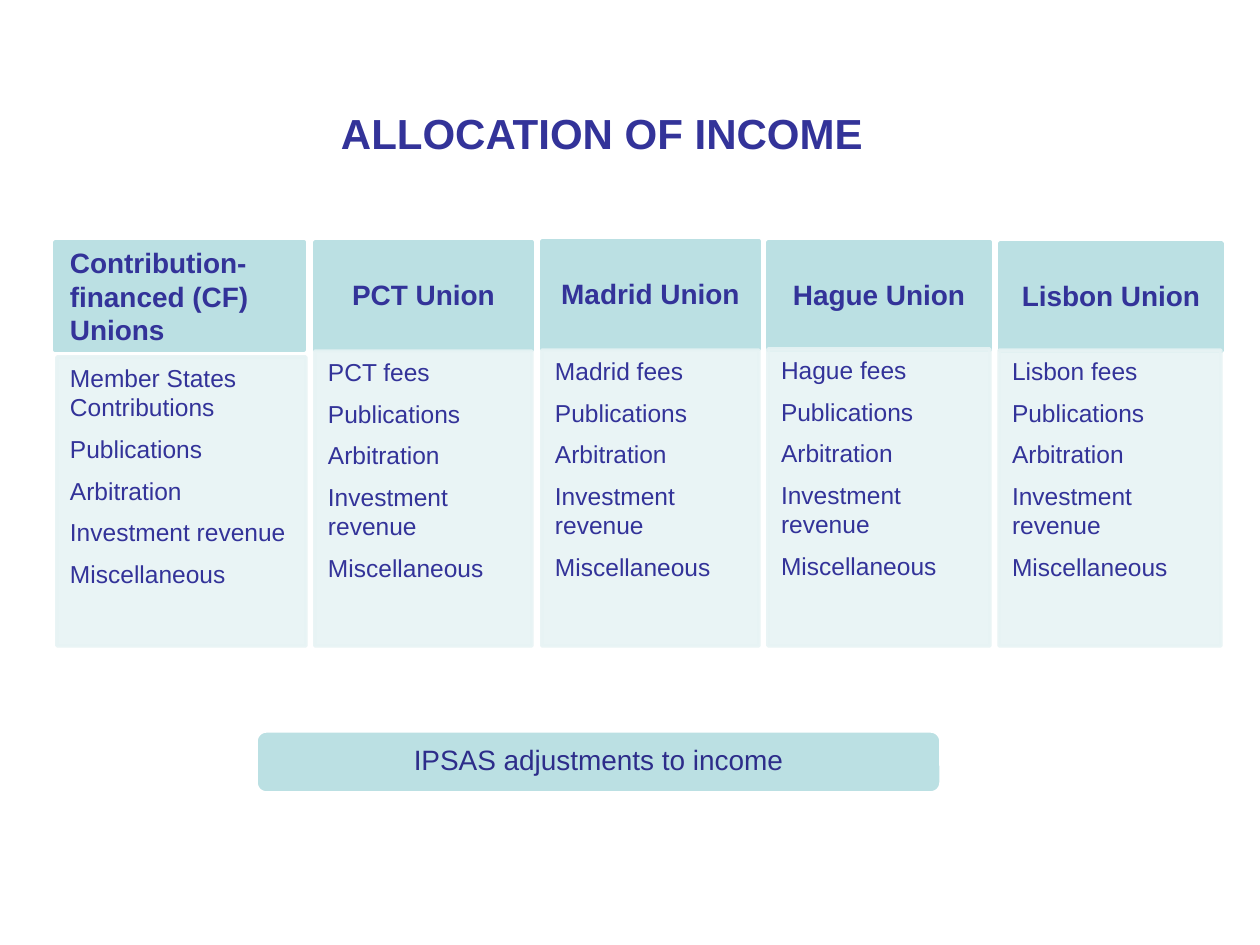
import dataclasses

import lxml.etree
import pptx
import pptx.dml.color
import pptx.enum.shapes
import pptx.enum.text
import pptx.oxml.ns
import pptx.util

EMU_PER_PX = 914400 / 126
SHAPES = pptx.enum.shapes.MSO_SHAPE
ALIGN = pptx.enum.text.PP_ALIGN
ANCHOR = pptx.enum.text.MSO_ANCHOR


@dataclasses.dataclass(frozen=True)
class Theme:
    """Colours, font and type sizes of the slide."""
    font: str = "Arial"
    ink: str = "333399"
    adjustment_ink: str = "2D2D8A"
    strong: str = "BBE0E3"
    pale: str = "E7F3F4"
    paper: str = "FFFFFF"
    title_size: int = 24
    heading_size: int = 16
    item_size: int = 14
    item_gap: int = 7
    border: int = 2
    pale_opacity: int = 90


@dataclasses.dataclass(frozen=True)
class Union:
    """One column: its heading, its first source of income and its place."""
    heading: tuple
    first_source: str
    left: int
    width: int
    top: int
    body_left: int
    body_top: int
    align: object = ALIGN.CENTER
    line_spacing: float = 0.9


THEME = Theme()
BODY_BOTTOM = 646
HEADING_HEIGHT = 108
SHARED_SOURCES = ("Publications", "Arbitration", "Investment revenue", "Miscellaneous")
UNIONS = (
    Union(("Contribution- financed (CF)", "Unions"), "Member States Contributions",
          55, 249, 242, 57, 357, ALIGN.LEFT, 1.0),
    Union(("PCT Union",), "PCT fees", 315, 217, 242, 315, 351),
    Union(("Madrid Union",), "Madrid fees", 542, 217, 241, 542, 350),
    Union(("Hague Union",), "Hague fees", 768, 222, 242, 768, 349),
    Union(("Lisbon Union",), "Lisbon fees", 1000, 222, 243, 999, 350),
)


def px(length):
    """Turn px into EMU."""
    return pptx.util.Emu(round(length * EMU_PER_PX))


def rgb(colour):
    """Turn a hex string into a colour."""
    return pptx.dml.color.RGBColor.from_string(colour)


def write(frame, lines, size, colour=THEME.ink, bold=False, align=ALIGN.LEFT,
          anchor=ANCHOR.TOP, margins=(13, 6), gap=0, line_spacing=1.0):
    """Fill a text frame with one paragraph per line."""
    frame.word_wrap = True
    frame.vertical_anchor = anchor
    frame.margin_left = frame.margin_right = px(margins[0])
    frame.margin_top = frame.margin_bottom = px(margins[1])
    for index, line in enumerate(lines):
        paragraph = frame.add_paragraph() if index else frame.paragraphs[0]
        paragraph.alignment = align
        paragraph.line_spacing = line_spacing
        paragraph.space_before = pptx.util.Pt(gap if index else 0)
        run = paragraph.add_run()
        run.text = line
        run.font.name = THEME.font
        run.font.size = pptx.util.Pt(size)
        run.font.bold = bold
        run.font.color.rgb = rgb(colour)


def add_panel(slide, kind, box, fill, border, opacity=100):
    """Add a filled and outlined shape and return it."""
    panel = slide.shapes.add_shape(kind, *map(px, box))
    panel.shadow.inherit = False
    panel.fill.solid()
    panel.fill.fore_color.rgb = rgb(fill)
    panel.line.color.rgb = rgb(border)
    panel.line.width = pptx.util.Pt(THEME.border)
    if opacity < 100:
        for colour in panel.element.spPr.iter(pptx.oxml.ns.qn("a:srgbClr")):
            alpha = lxml.etree.SubElement(colour, pptx.oxml.ns.qn("a:alpha"))
            alpha.set("val", str(opacity * 1000))
    return panel


def add_title(slide, box):
    """Add the slide title."""
    title = slide.shapes.add_textbox(*map(px, box))
    write(title.text_frame, ["ALLOCATION OF INCOME"], THEME.title_size, bold=True)


def add_union(slide, union):
    """Add one union's heading and its list of income sources."""
    heading = add_panel(slide, SHAPES.RECTANGLE,
                        (union.left, union.top, union.width, HEADING_HEIGHT),
                        THEME.strong, THEME.strong)
    write(heading.text_frame, union.heading, THEME.heading_size, bold=True,
          align=union.align, anchor=ANCHOR.MIDDLE, margins=(15, 9),
          line_spacing=union.line_spacing)
    sources = add_panel(slide, SHAPES.RECTANGLE,
                        (union.body_left, union.body_top, union.width,
                         BODY_BOTTOM - union.body_top),
                        THEME.pale, THEME.pale, THEME.pale_opacity)
    write(sources.text_frame, (union.first_source, *SHARED_SOURCES),
          THEME.item_size, gap=THEME.item_gap)


def add_adjustments(slide, box):
    """Add the bar for the adjustments that apply to all unions."""
    bar = add_panel(slide, SHAPES.ROUNDED_RECTANGLE, box, THEME.strong, THEME.paper)
    write(bar.text_frame, ["IPSAS adjustments to income"], THEME.heading_size,
          THEME.adjustment_ink, align=ALIGN.CENTER, anchor=ANCHOR.MIDDLE,
          margins=(9, 9), line_spacing=0.9)


def main():
    """Build and save the slide."""
    deck = pptx.Presentation()
    deck.slide_width, deck.slide_height = px(1260), px(945)
    slide = deck.slides.add_slide(deck.slide_layouts[6])
    add_title(slide, (328, 102, 645, 63))
    for union in UNIONS:
        add_union(slide, union)
    add_adjustments(slide, (256, 731, 685, 62))
    deck.save("out.pptx")


if __name__ == "__main__":
    main()
